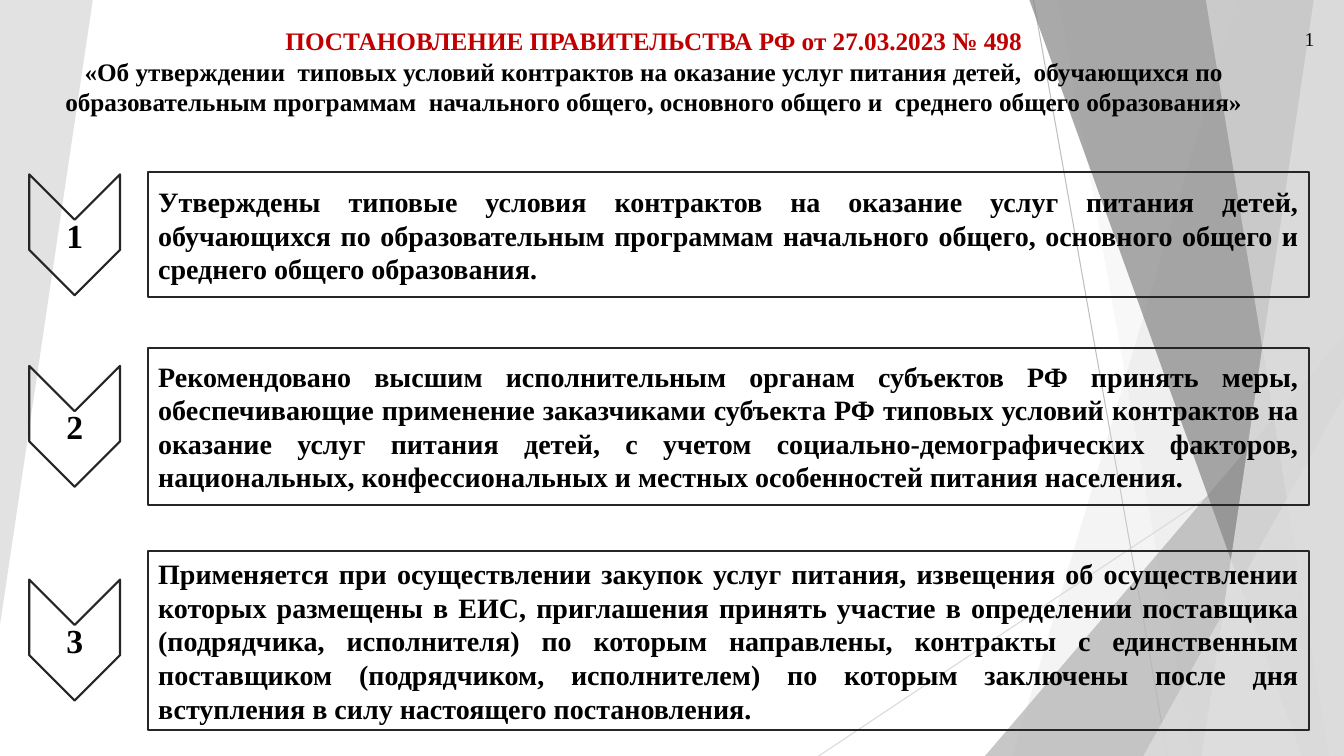
from pptx import Presentation
from pptx import util as u
from pptx.dml.color import RGBColor
from pptx.enum import shapes, text
from pptx.oxml import parse_xml
from pptx.oxml.ns import nsdecls, qn

PX = 9144
WIDTH, HEIGHT = 1333, 750
COLORS = {
    "ink": "000000", "title": "C00000", "outline": "262626",
    "rule": "BFBFBF", "pale_rule": "D9D9D9", "mist": "DDDDDD",
    "silver": "B2B2B2", "slate": "858585", "snow": "EBEBEB",
}
TITLE = "ПОСТАНОВЛЕНИЕ ПРАВИТЕЛЬСТВА РФ от 27.03.2023 № 498"
SUBTITLE = (
    "«Об утверждении  типовых условий контрактов на оказание услуг питания детей,  "
    "обучающихся по образовательным программам  начального общего, основного общего и  "
    "среднего общего образования»"
)
POINTS = [
    (171, 124, 188,
     "Утверждены типовые условия контрактов на оказание услуг питания детей, обучающихся "
     "по образовательным программам начального общего, основного общего и среднего общего "
     "образования."),
    (345, 156, 378,
     "Рекомендовано высшим исполнительным органам субъектов РФ принять меры, "
     "обеспечивающие применение заказчиками субъекта РФ типовых условий контрактов на "
     "оказание услуг питания детей, с учетом социально-демографических факторов, "
     "национальных, конфессиональных и местных особенностей питания населения."),
    (547, 177, 590,
     "Применяется при осуществлении закупок услуг питания, извещения об осуществлении "
     "которых размещены в ЕИС, приглашения принять участие в определении поставщика "
     "(подрядчика, исполнителя) по которым направлены, контракты с единственным "
     "поставщиком (подрядчиком, исполнителем) по которым заключены после дня вступления "
     "в силу настоящего постановления."),
]


class Slide:
    font = "Times New Roman"

    def __init__(self, page):
        self.page = page

    def color(self, name):
        return RGBColor.from_string(COLORS[name])

    def paint(self, shape, name, opacity):
        shape.shadow.inherit = False
        shape.line.fill.background()
        shape.fill.solid()
        shape.fill.fore_color.rgb = self.color(name)
        tint = shape.element.spPr.find(qn("a:solidFill"))[0]
        tint.append(parse_xml(f'<a:alpha {nsdecls("a")} val="{opacity * 1000}"/>'))

    def rule(self, start, end, name):
        line = self.page.shapes.add_connector(
            shapes.MSO_CONNECTOR.STRAIGHT, *(v * PX for v in start + end))
        line.line.color.rgb = self.color(name)
        line.line.width = u.Pt(0.75)
        line.element.spPr.append(parse_xml(f'<a:effectLst {nsdecls("a")}/>'))

    def facet(self, top, bottom, name, opacity):
        builder = self.page.shapes.build_freeform(top, 0, scale=PX)
        builder.add_line_segments([(WIDTH, 0), (WIDTH, HEIGHT), (bottom, HEIGHT)])
        self.paint(builder.convert_to_shape(), name, opacity)

    def shape(self, kind, area):
        box = self.page.shapes.add_shape(kind, *(v * PX for v in area))
        box.shadow.inherit = False
        return box

    def corner(self, area, name, opacity, rotation=0):
        box = self.shape(shapes.MSO_SHAPE.ISOSCELES_TRIANGLE, area)
        box.adjustments[0] = 1
        box.rotation = rotation
        self.paint(box, name, opacity)

    def fill_text(self, box, lines, size, align, bold=True):
        frame = box.text_frame
        frame.text = "\n".join(line for line, _ in lines)
        for para, (_, name) in zip(frame.paragraphs, lines):
            para.alignment = align
            for span in para.runs:
                span.font.name = self.font
                span.font.size = u.Pt(size)
                span.font.bold = bold
                span.font.color.rgb = self.color(name)

    def panel(self, kind, area, lines, size, align, outlined=True):
        box = self.shape(kind, area)
        box.fill.background()
        if outlined:
            box.line.color.rgb = self.color("outline")
            box.line.width = u.Pt(1.5)
        else:
            box.line.fill.background()
        box.text_frame.vertical_anchor = text.MSO_ANCHOR.MIDDLE
        self.fill_text(box, lines, size, align)
        return box

    def chevron(self, top, number):
        box = self.panel(shapes.MSO_SHAPE.CHEVRON, (14, top, 120, 90),
                         [(str(number), "ink")], 24, text.PP_ALIGN.CENTER)
        box.rotation = 90
        box.element.txBody.find(qn("a:bodyPr")).set("vert", "vert270")

    def label(self, area, words, size):
        box = self.page.shapes.add_textbox(*(v * PX for v in area))
        box.text_frame.word_wrap = False
        box.text_frame.auto_size = text.MSO_AUTO_SIZE.SHAPE_TO_FIT_TEXT
        self.fill_text(box, [(words, "ink")], size, text.PP_ALIGN.LEFT, bold=False)


def main():
    deck = Presentation()
    deck.slide_width, deck.slide_height = WIDTH * PX, HEIGHT * PX
    slide = Slide(deck.slides.add_slide(deck.slide_layouts[6]))

    slide.rule((1025, 0), (1158, HEIGHT), "rule")
    slide.rule((WIDTH, 403), (812, HEIGHT), "pale_rule")
    slide.facet(1228, 1004, "mist", 30)
    slide.facet(1050, 1183, "mist", 20)
    slide.corner((977, 333, 356, 417), "silver", 72)
    slide.facet(1021, 1291, "slate", 70)
    slide.facet(1303, 1192, "snow", 70)
    slide.facet(1196, 1318, "mist", 65)
    slide.corner((1134, 393, 199, 357), "mist", 80)
    slide.corner((0, 0, 92, 620), "mist", 85, rotation=180)

    slide.panel(shapes.MSO_SHAPE.ROUNDED_RECTANGLE, (29, 20, 1239, 101),
                [(TITLE, "title"), (SUBTITLE, "ink")], 18,
                text.PP_ALIGN.CENTER, outlined=False)
    for number, (top, height, chevron_top, words) in enumerate(POINTS, 1):
        slide.chevron(chevron_top, number)
        slide.panel(shapes.MSO_SHAPE.RECTANGLE, (147, top, 1151, height),
                    [(words, "ink")], 20, text.PP_ALIGN.JUSTIFY)
    slide.label((1284, 22, 30, 34), "1", 14)

    deck.save("out.pptx")


if __name__ == "__main__":
    main()
